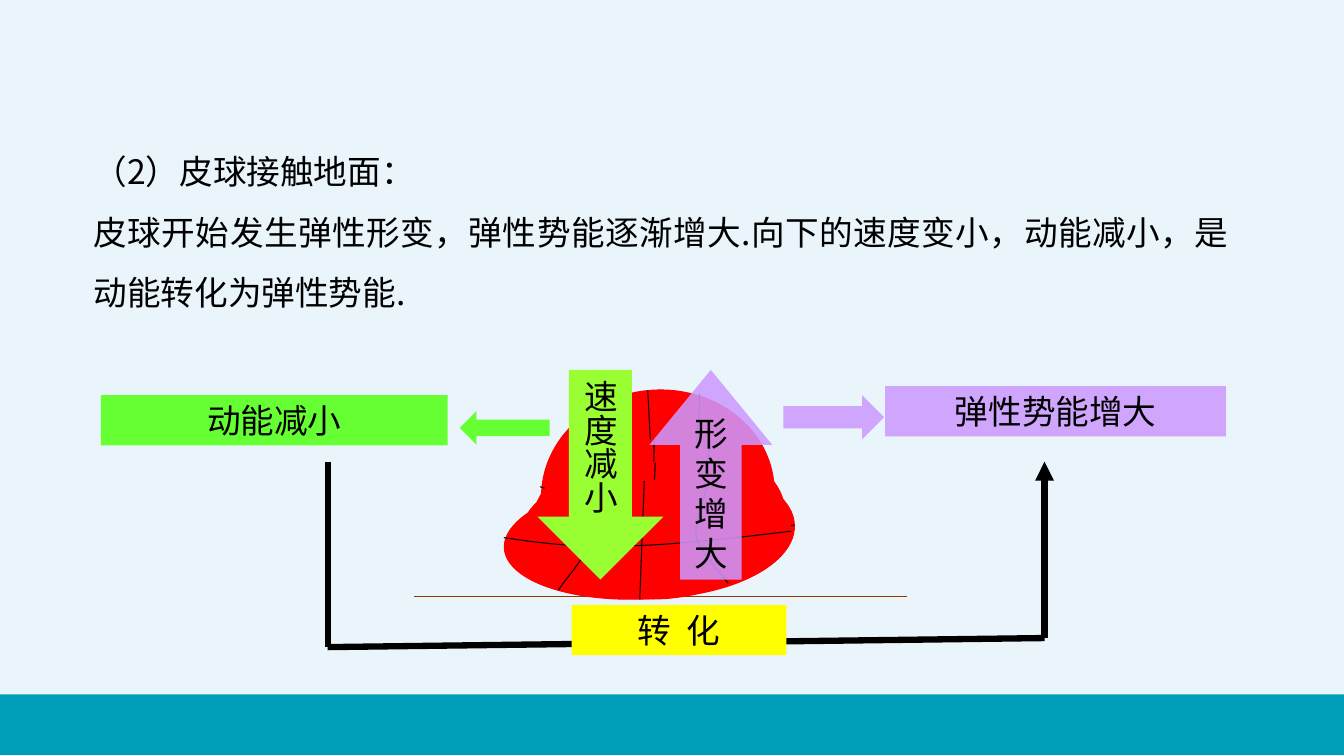
"""Builds the slide on a ball touching the ground and its energy conversion."""
from lxml.etree import SubElement
from pptx import Presentation
from pptx.dml.color import RGBColor
from pptx.enum.shapes import MSO_CONNECTOR, MSO_SHAPE as SHAPE
from pptx.enum.text import MSO_ANCHOR as ANCHOR, MSO_AUTO_SIZE as AUTO_SIZE, PP_ALIGN as ALIGN
from pptx.oxml.ns import qn
from pptx.util import Inches, Pt

FONT = "Noto Sans CJK SC"
BLACK, RED, LILAC = "000000", "FF0000", "CC99FF"


def paint(fill, color, opacity=100):
    fill.solid()
    fill.fore_color.rgb = RGBColor.from_string(color)
    if opacity < 100:
        color_node = fill._xPr.find(qn("a:solidFill"))[0]
        SubElement(color_node, qn("a:alpha"), val=str(opacity * 1000))


def write(frame, lines, align, spacing=None):
    frame.word_wrap = True
    frame.auto_size = AUTO_SIZE.SHAPE_TO_FIT_TEXT
    frame.text = "\n".join(lines)
    for paragraph in frame.paragraphs:
        paragraph.alignment = align
        paragraph.line_spacing = spacing
        paragraph.font.size = Pt(24)
        paragraph.font.name = FONT
        paint(paragraph.font.fill, BLACK)
        for run in paragraph.runs:
            SubElement(run._r.get_or_add_rPr(), qn("a:ea"), typeface=FONT)


deck = Presentation()
deck.slide_width, deck.slide_height = Inches(13.33), Inches(7.5)
slide = deck.slides.add_slide(deck.slide_layouts[6])

for top, height, color in [(0, 7.5, "EAF5FB"), (6.89, 0.6, "009FB9")]:
    band = slide.shapes.add_shape(
        SHAPE.RECTANGLE, Inches(-0.03), Inches(top), Inches(13.39), Inches(height))
    band.shadow.inherit = False
    paint(band.fill, color)
    band.line.fill.background()

lines = [
    (4.11, 5.92, 9, 5.92, "993300", 0.75, False),
    (3.25, 4.58, 3.25, 6.42, BLACK, 4.5, False),
    (3.25, 6.42, 10.36, 6.33, BLACK, 4.5, False),
    (10.36, 6.33, 10.36, 4.58, BLACK, 4.5, True),
]
for x1, y1, x2, y2, color, width, has_head in lines:
    ends = [Inches(value) for value in (x1, y1, x2, y2)]
    connector = slide.shapes.add_connector(MSO_CONNECTOR.STRAIGHT, *ends)
    connector.line.width = Pt(width)
    paint(connector.line.fill, color)
    if has_head:
        SubElement(connector.line._get_or_add_ln(), qn("a:tailEnd"), type="triangle")
    SubElement(connector._element.spPr, qn("a:effectLst"))

seams = [
    [(-0.25, -0.44), (-0.24, -0.36), (-0.19, -0.14), (-0.21, 0),
     (-0.22, 0.13), (-0.3, 0.3), (-0.32, 0.38)],
    [(0.22, -0.46), (0.22, -0.38), (0.16, -0.15), (0.17, 0),
     (0.18, 0.14), (0.25, 0.32), (0.27, 0.41)],
    [(-0.5, -0.09), (-0.38, -0.03), (-0.26, 0.03), (-0.09, 0.04),
     (0.08, 0.06), (0.29, 0.03), (0.5, 0)],
    [(0, -0.5), (0, -0.5), (-0.02, 0), (-0.04, 0.5)],
]
ball_stages = [
    (5.37, 3.87, 2.31, 2.06, -5.6),
    (5.28, 4.36, 2.51, 1.58, -3.5),
    (5.17, 4.59, 2.71, 1.34, -2.2),
    (5, 4.77, 2.85, 1.17, -3.4),
]
for left, top, width, height, angle in ball_stages:
    stage = slide.shapes.add_group_shape()
    ball = stage.shapes.add_shape(
        SHAPE.OVAL, Inches(left), Inches(top), Inches(width), Inches(height))
    ball.shadow.inherit = False
    paint(ball.fill, RED)
    paint(ball.line.fill, RED)
    ball.line.width = Pt(0.75)
    for seam in seams:
        track = [(Inches(left + width * (0.5 + u)), Inches(top + height * (0.5 + v)))
                 for u, v in seam]
        builder = stage.shapes.build_freeform(*track[0])
        builder.add_line_segments(track[1:], close=False)
        curve = builder.convert_to_shape()
        outline = next(curve._element.iter(qn("a:path")))
        segments = outline.findall(qn("a:lnTo"))
        for start in range(0, len(segments), 3):
            bezier = SubElement(outline, qn("a:cubicBezTo"))
            for segment in segments[start:start + 3]:
                bezier.append(segment[0])
                outline.remove(segment)
        curve.shadow.inherit = False
        curve.fill.background()
        paint(curve.line.fill, BLACK)
        curve.line.width = Pt(0.75)
    stage.rotation = angle

explanation = slide.shapes.add_textbox(Inches(0.83), Inches(1.25), Inches(11.45), Inches(1.92))
write(explanation.text_frame, [
    "（2）皮球接触地面：",
    "皮球开始发生弹性形变，弹性势能逐渐增大.向下的速度变小，动能减小，是动能转化为弹性势能.",
], ALIGN.JUSTIFY, 1.5)

blocks = [
    (SHAPE.RECTANGLE, 1, 3.92, 3.44, 0.5, "66FF33", 100, "动能减小"),
    (SHAPE.RECTANGLE, 8.78, 3.83, 3.38, 0.5, LILAC, 86, "弹性势能增大"),
    (SHAPE.RECTANGLE, 5.67, 6, 2.13, 0.5, "FFFF00", 100, "转  化"),
    (SHAPE.DOWN_ARROW, 5.33, 3.67, 1.25, 2.08, "99FF33", 100, "速度减小"),
    (SHAPE.LEFT_ARROW, 4.56, 4.08, 0.89, 0.33, "66FF33", 100, ""),
    (SHAPE.UP_ARROW, 6.44, 3.67, 1.22, 2.08, LILAC, 86, "形变增大"),
    (SHAPE.RIGHT_ARROW, 7.77, 3.92, 1, 0.44, LILAC, 86, ""),
]
for kind, left, top, width, height, color, opacity, label in blocks:
    block = slide.shapes.add_shape(kind, Inches(left), Inches(top), Inches(width), Inches(height))
    block.shadow.inherit = False
    paint(block.fill, color, opacity)
    block.line.fill.background()
    if label:
        frame = block.text_frame
        write(frame, [label], ALIGN.CENTER)
        frame.vertical_anchor = ANCHOR.TOP
        if kind == SHAPE.DOWN_ARROW:
            frame.vertical_anchor = ANCHOR.MIDDLE
            frame.word_wrap = False
            frame.auto_size = AUTO_SIZE.NONE
            frame._txBody.bodyPr.set("vert", "eaVert")
    if kind == SHAPE.UP_ARROW:
        block.adjustments[1] = 0.61

deck.save("out.pptx")
